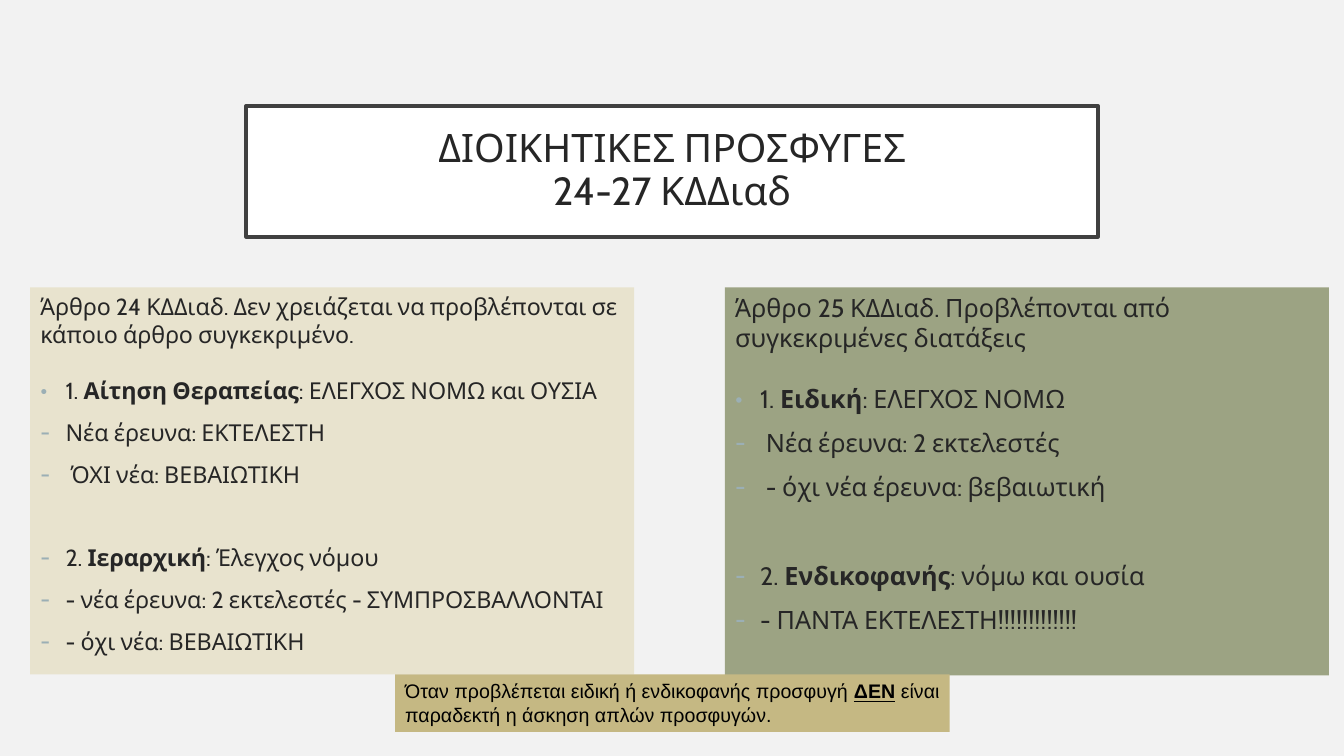
"""Builds a slide comparing simple and special administrative appeals."""
import pptx
import pptx.dml.color
import pptx.enum.text
import pptx.oxml.ns
import pptx.util
from lxml import etree

Inches, Pt = pptx.util.Inches, pptx.util.Pt
RGBColor = pptx.dml.color.RGBColor
ALIGN, ANCHOR = pptx.enum.text.PP_ALIGN, pptx.enum.text.MSO_ANCHOR
FIT = pptx.enum.text.MSO_AUTO_SIZE

PAPER = RGBColor(0xF2, 0xF2, 0xF2)
WHITE = RGBColor(0xFF, 0xFF, 0xFF)
FRAME = RGBColor(0x40, 0x40, 0x40)
INK = RGBColor(0x26, 0x26, 0x26)
BLACK = RGBColor(0x00, 0x00, 0x00)
CREAM = RGBColor(0xE8, 0xE3, 0xCE)
SAGE = RGBColor(0x9C, 0xA3, 0x83)
SAND = RGBColor(0xC5, 0xB8, 0x83)
BULLET = "9BAFB5"
LINE = 1.2

SIMPLE = [
    (None, 0, ["Άρθρο 24 ΚΔΔιαδ. Δεν χρειάζεται να προβλέπονται σε κάποιο άρθρο συγκεκριμένο."]),
    ("•", LINE, ["1. ", "Αίτηση Θεραπείας", ": ΕΛΕΓΧΟΣ ΝΟΜΩ και ΟΥΣΙΑ"]),
    ("-", 0, ["Νέα έρευνα: ΕΚΤΕΛΕΣΤΗ"]),
    ("-", 0, [" ΌΧΙ νέα: ΒΕΒΑΙΩΤΙΚΗ"]),
    ("-", LINE, ["2. ", "Ιεραρχική", ": Έλεγχος νόμου"]),
    ("-", 0, ["- νέα έρευνα: 2 εκτελεστές - ΣΥΜΠΡΟΣΒΑΛΛΟΝΤΑΙ"]),
    ("-", 0, ["- όχι νέα: ΒΕΒΑΙΩΤΙΚΗ"]),
]
SPECIAL = [
    (None, 0, ["Άρθρο 25 ΚΔΔιαδ. Προβλέπονται από συγκεκριμένες διατάξεις"]),
    ("•", LINE, ["1. ", "Ειδική", ": ΕΛΕΓΧΟΣ ΝΟΜΩ"]),
    ("-", 0, [" Νέα έρευνα: 2 εκτελεστές"]),
    ("-", 0, [" - όχι νέα έρευνα: βεβαιωτική"]),
    ("-", LINE, ["2. ", "Ενδικοφανής", ": νόμω και ουσία"]),
    ("-", 0, ["- ΠΑΝΤΑ ΕΚΤΕΛΕΣΤΗ!!!!!!!!!!!!!"]),
]


class Deck:
    """Holds the style and the current slide."""

    def __init__(self):
        self.prs = pptx.Presentation()
        self.prs.slide_width, self.prs.slide_height = Inches(13.33), Inches(7.5)
        self.s = self.prs.slides.add_slide(self.prs.slide_layouts[3])
        self.s.background.fill.solid()
        self.s.background.fill.fore_color.rgb = PAPER

    def apply(self, obj, values):
        """Sets every attribute named in values."""
        for name, value in values.items():
            setattr(obj, name, value)

    def box(self, sp, at, fill, inset=(0.1, 0.05), **frame):
        """Places and fills a shape and returns its text frame."""
        self.apply(sp, dict(zip(("left", "top", "width", "height"), map(Inches, at))))
        sp.fill.solid()
        sp.fill.fore_color.rgb = fill
        x, y = map(Inches, inset)
        tf = sp.text_frame
        self.apply(tf, {"word_wrap": True, "auto_size": FIT.NONE,
                        "margin_left": x, "margin_right": x,
                        "margin_top": y, "margin_bottom": y, **frame})
        return tf

    def runs(self, p, texts, size, font="Cabin", color=INK, **strong):
        """Adds runs, the second of which is emphasised."""
        for i, text in enumerate(texts):
            r = p.add_run()
            r.text = text
            style = {"name": font, "size": Pt(size), "bold": False}
            self.apply(r.font, {**style, **({"bold": True, **strong} if i == 1 else {})})
            r.font.color.rgb = color

    def bullet(self, p, char):
        """Sets the indent and bullet of a paragraph."""
        qn = pptx.oxml.ns.qn
        pPr = p._p.get_or_add_pPr()
        indent = Inches(0.25) if char else 0
        pPr.set("marL", str(indent))
        pPr.set("indent", str(-indent))
        if not char:
            etree.SubElement(pPr, qn("a:buNone"))
            return
        color = etree.SubElement(pPr, qn("a:buClr"))
        etree.SubElement(color, qn("a:srgbClr"), val=BULLET)
        etree.SubElement(pPr, qn("a:buFont"), typeface="Cabin")
        etree.SubElement(pPr, qn("a:buChar"), char=char)

    def title(self, lines, at):
        """Fills the framed title."""
        sp = self.s.shapes.title
        tf = self.box(sp, at, WHITE, (0.2, 0.2), vertical_anchor=ANCHOR.MIDDLE)
        sp.line.color.rgb = FRAME
        sp.line.width = Pt(2.5)
        p = tf.paragraphs[0]
        self.apply(p, {"alignment": ALIGN.CENTER, "line_spacing": 0.9})
        for i, line in enumerate(lines):
            if i:
                p.add_line_break()
            self.runs(p, [line], 28)

    def panel(self, idx, at, fill, size, items):
        """Fills a body placeholder with a lead and a list."""
        tf = self.box(self.s.placeholders[idx], at, fill, vertical_anchor=ANCHOR.TOP)
        for i, (char, gap, texts) in enumerate(items):
            p = tf.add_paragraph() if i else tf.paragraphs[0]
            self.bullet(p, char)
            before = gap * size + (10 if char == "-" else 0)
            if gap and char == "-":
                before += 10
            self.apply(p, {"space_before": Pt(before), "line_spacing": 1.0,
                           "alignment": ALIGN.LEFT})
            self.runs(p, texts, size)

    def note(self, texts, at, fill):
        """Adds the closing remark."""
        sp = self.s.shapes.add_textbox(*map(Inches, at))
        tf = self.box(sp, at, fill, auto_size=FIT.SHAPE_TO_FIT_TEXT)
        self.runs(tf.paragraphs[0], texts, 14, "Arial", BLACK, underline=True)


def main():
    deck = Deck()
    deck.title(["ΔΙΟΙΚΗΤΙΚΕΣ ΠΡΟΣΦΥΓΕΣ", "24-27 ΚΔΔιαδ"], (2.44, 1.05, 8.45, 1.3))
    deck.panel(1, (0.3, 2.85, 5.99, 3.84), CREAM, 16.6, SIMPLE)
    deck.panel(2, (7.19, 2.85, 5.99, 3.85), SAGE, 18, SPECIAL)
    deck.note(["Όταν προβλέπεται ειδική ή ενδικοφανής προσφυγή ", "ΔΕΝ",
               " είναι παραδεκτή η άσκηση απλών προσφυγών."],
              (3.92, 6.69, 5.5, 0.57), SAND)
    deck.prs.save("out.pptx")


if __name__ == "__main__":
    main()
